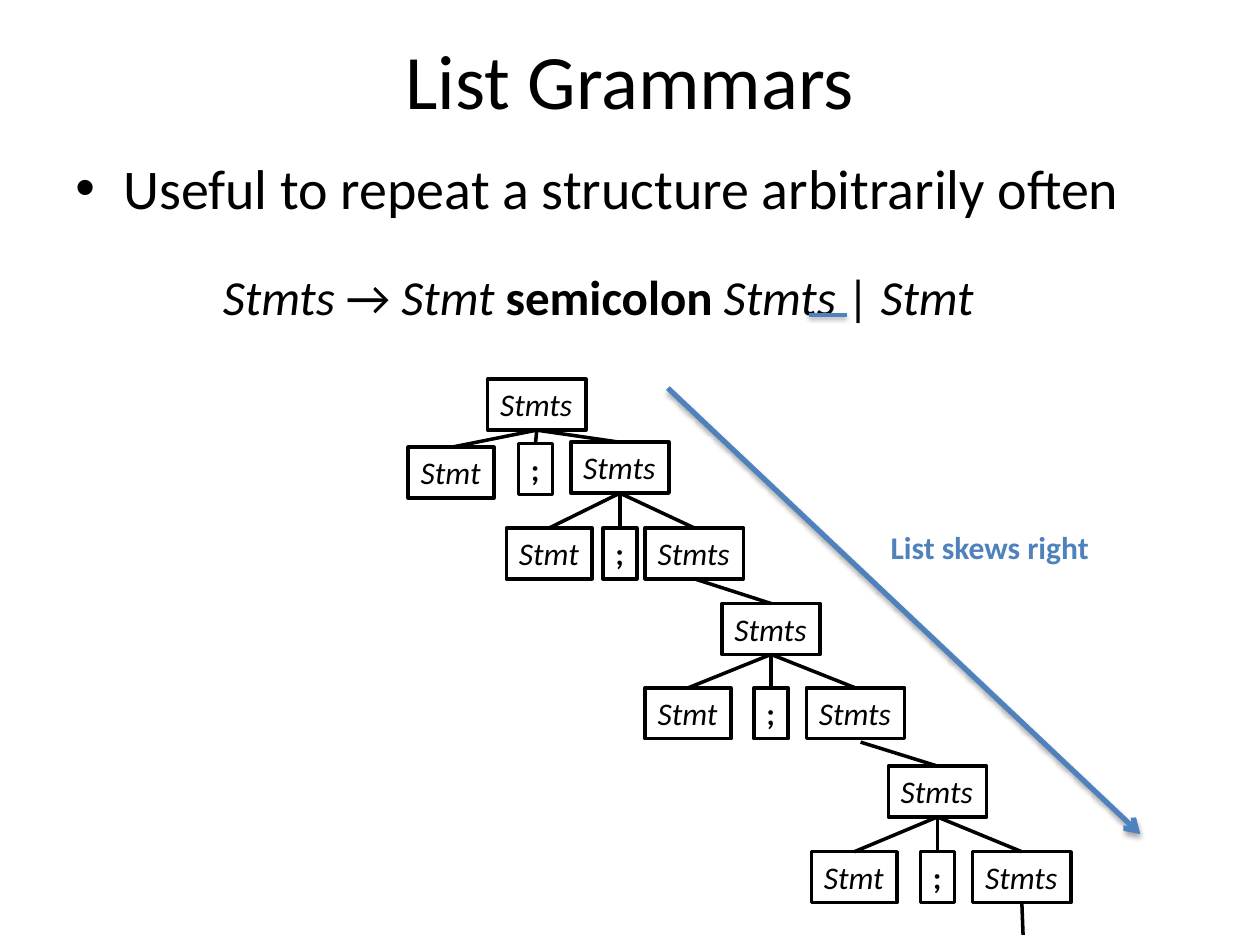
from lxml import etree
from pptx import Presentation
from pptx.dml.color import RGBColor
from pptx.enum.shapes import MSO_CONNECTOR as CONN, MSO_SHAPE as SHAPE
from pptx.enum.text import MSO_ANCHOR as ANCHOR, MSO_AUTO_SIZE as AUTO, PP_ALIGN as ALIGN
from pptx.oxml.ns import qn
from pptx.util import Inches, Pt

BLACK = RGBColor(0x00, 0x00, 0x00)
WHITE = RGBColor(0xFF, 0xFF, 0xFF)
BLUE = RGBColor(0x4F, 0x81, 0xBD)
COLS, ROWS = 100, 75  # grid over the slide
TOP, BOTTOM = 0, 2  # connection sites of a rectangle
ITALIC, BOLD, PLAIN = "i", "b", ""


class Deck:
    font = "Calibri"

    def __init__(self, prs):
        self.cell_w = prs.slide_width / COLS
        self.cell_h = prs.slide_height / ROWS
        self.slide = prs.slides.add_slide(prs.slide_layouts[6])

    def x(self, col):
        return round(col * self.cell_w)

    def y(self, row):
        return round(row * self.cell_h)

    def add_runs(self, sp, runs, size, color=BLACK, wrap=True, align=ALIGN.LEFT):
        tf = sp.text_frame
        tf.word_wrap = wrap
        p = tf.paragraphs[0]
        p.alignment = align
        for text, style in runs:
            r = p.add_run()
            r.text = text
            r.font.name, r.font.size = self.font, Pt(size)
            r.font.color.rgb = color
            r.font.italic, r.font.bold = style == ITALIC, style == BOLD
        return p

    def text(self, col, row, w, h, runs, size, **style):
        sp = self.slide.shapes.add_textbox(self.x(col), self.y(row), self.x(w), self.y(h))
        return sp, self.add_runs(sp, runs, size, **style)

    def bullet(self, col, row, w, h, text, size):
        _, p = self.text(col, row, w, h, [(text, PLAIN)], size)
        ppr = p._p.get_or_add_pPr()
        ppr.set("marL", str(Inches(0.38)))
        ppr.set("indent", str(Inches(-0.38)))
        etree.SubElement(ppr, qn("a:buFont"), typeface="Arial")
        etree.SubElement(ppr, qn("a:buChar"), char="•")

    def node(self, center, row, label):
        """Draw a tree node whose width follows from its label."""
        w = {"Stmts": 7.8, "Stmt": 6.8, ";": 2.7}[label]
        sp = self.slide.shapes.add_shape(
            SHAPE.RECTANGLE, self.x(center - w / 2), self.y(row), self.x(w), self.y(4.04))
        sp.shadow.inherit = False
        sp.fill.solid()
        sp.fill.fore_color.rgb = WHITE
        sp.line.color.rgb, sp.line.width = BLACK, Pt(2)
        self.add_runs(sp, [(label, BOLD if label == ";" else ITALIC)], 18, wrap=False)
        sp.text_frame.vertical_anchor = ANCHOR.TOP
        sp.text_frame.auto_size = AUTO.SHAPE_TO_FIT_TEXT
        return sp

    def line(self, start=(0, 0), end=(0, 0), parent=None, child=None,
             color=BLACK, width=2, arrow=False, shadow=None):
        ends = self.x(start[0]), self.y(start[1]), self.x(end[0]), self.y(end[1])
        cx = self.slide.shapes.add_connector(CONN.STRAIGHT, *ends)
        if parent is not None:
            cx.begin_connect(parent, BOTTOM)
        if child is not None:
            cx.end_connect(child, TOP)
        cx.line.color.rgb, cx.line.width = color, Pt(width)
        sppr = cx.element.spPr
        if arrow:
            etree.SubElement(sppr.find(qn("a:ln")), qn("a:tailEnd"), type="arrow")
        effects = etree.SubElement(sppr, qn("a:effectLst"))
        if shadow:
            alpha, distance = shadow
            outer = etree.SubElement(
                effects, qn("a:outerShdw"), blurRad=str(Pt(3.1)), dist=str(Pt(distance)),
                dir="5400000", rotWithShape="0")
            black = etree.SubElement(outer, qn("a:srgbClr"), val=str(BLACK))
            etree.SubElement(black, qn("a:alpha"), val=str(alpha * 1000))

    def expand(self, parent, children):
        """Draw the production below a parent; return its last node."""
        for center, row, label in children:
            child = self.node(center, row, label)
            self.line(parent=parent, child=child)
        return child


def production(center, row, left=6.6, right=6.7):
    return [(center - left, row, "Stmt"), (center, row, ";"), (center + right, row, "Stmts")]


def main():
    prs = Presentation()
    prs.slide_width, prs.slide_height = Inches(10), Inches(7.5)
    s = Deck(prs)

    # Title
    title, _ = s.text(5, 0, 90, 12.5, [("List Grammars", PLAIN)], 44, align=ALIGN.CENTER)
    title.text_frame.vertical_anchor = ANCHOR.MIDDLE

    # Upper part of the tree
    root = s.node(42.6, 30.1, "Stmts")
    second = s.expand(root, [(35.8, 35.5, "Stmt"), (42.5, 35.2, ";"), (49.2, 35.1, "Stmts")])
    third = s.expand(second, production(49.2, 41.9, 5.6, 5.9))

    # Lower part of the tree
    fourth = s.node(61.2, 47.9, "Stmts")
    s.line(parent=third, child=fourth)
    s.expand(fourth, production(61.2, 54.6))
    fifth = s.node(74.4, 60.8, "Stmts")
    s.line(start=(68.3, 58.9), child=fifth)
    last = s.expand(fifth, production(74.4, 67.6))
    s.line(end=(81.2, 74.2), parent=last)

    # Skew arrow and its label
    s.line((53, 30.8), (90.5, 66.2), color=BLUE, width=3, arrow=True, shadow=(35, 1.8))
    s.text(69.7, 41.4, 17.9, 4, [("List skews right", BOLD)], 18, color=BLUE, wrap=False)

    # Bullet and grammar rule
    s.bullet(5, 11.7, 90, 49.5, "Useful to repeat a structure arbitrarily often", 32)
    rule = [("Stmts", ITALIC), (" → ", PLAIN), ("Stmt ", ITALIC), ("semicolon ", BOLD),
            ("Stmts ", ITALIC), ("| ", PLAIN), ("Stmt", ITALIC)]
    _, p = s.text(16.7, 18.3, 81.7, 8.1, rule, 28)
    p.line_spacing = 1.5
    s.line((64.2, 25), (67.2, 25), color=BLUE, shadow=(38, 1.6))

    prs.save("out.pptx")


if __name__ == "__main__":
    main()
